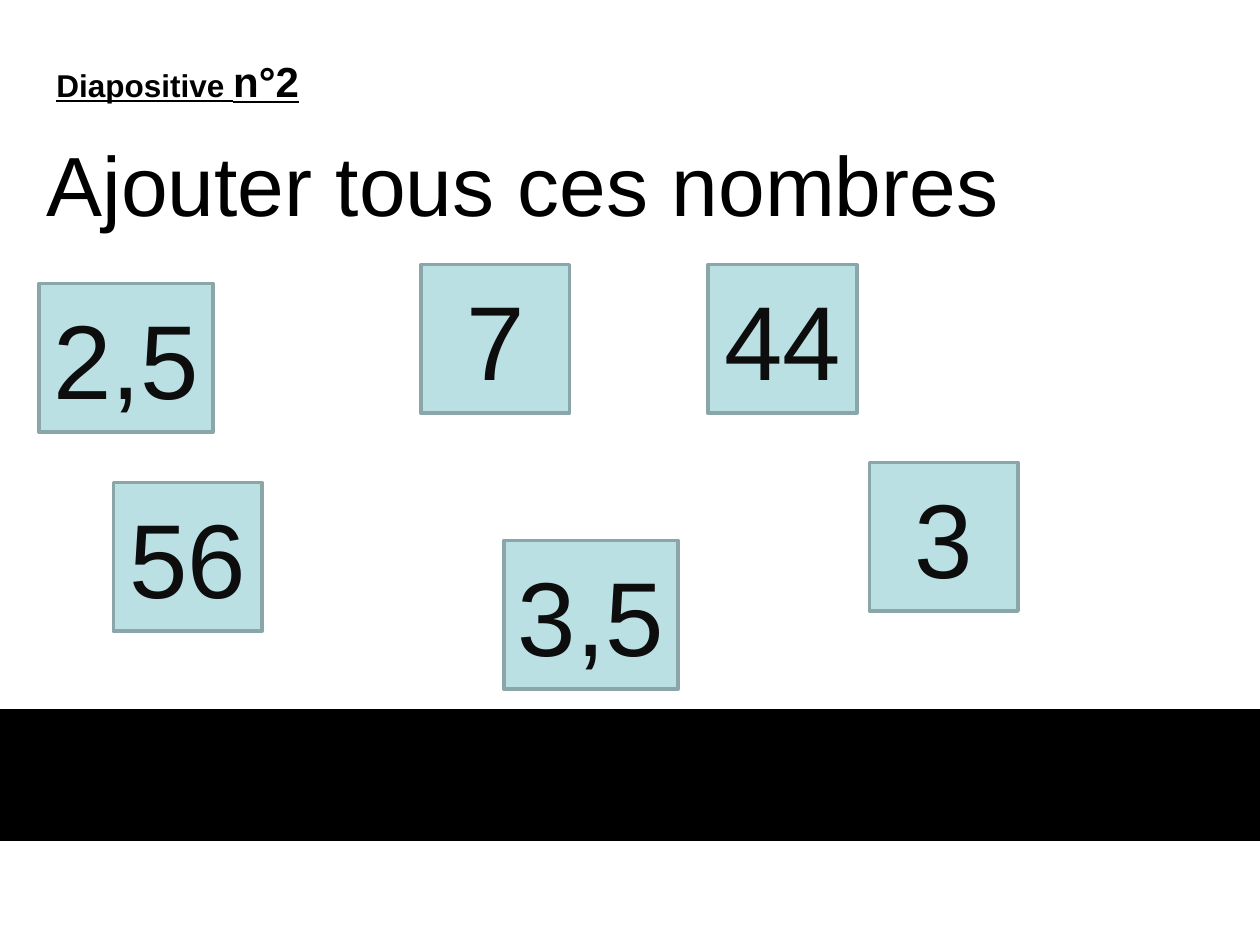
from dataclasses import dataclass

from pptx import Presentation, util as u
from pptx.dml.color import RGBColor
from pptx.enum import shapes, text

HUES = {"ink": "000000", "digit": "0D0D0D", "tile": "BBE0E3", "edge": "8AA6A8"}
SIDE = 1.18
WIDE = 1.38


@dataclass
class Tile:
    label: str
    left: float
    top: float
    width: float = SIDE


TILES = [
    Tile("2,5", 0.31, 2.25, WIDE),
    Tile("56", 0.9, 3.83),
    Tile("3", 6.9, 3.67),
    Tile("44", 5.62, 2.1),
    Tile("7", 3.34, 2.1),
    Tile("3,5", 4, 4.29, WIDE),
]


def hue(name: str) -> RGBColor:
    return RGBColor.from_string(HUES[name])


def write(para, words: str, *, size: float, color: str = "ink",
          bold: bool = False, under: bool = False,
          align=text.PP_ALIGN.LEFT) -> None:
    para.alignment = align
    run = para.add_run()
    run.text = words
    font = run.font
    font.name = "Arial"
    font.size = u.Pt(size)
    font.bold = bold
    font.underline = under
    font.color.rgb = hue(color)


def block(slide, left: float, top: float, width: float, height: float,
          fill: str, edge: str):
    box = slide.shapes.add_shape(
        shapes.MSO_SHAPE.RECTANGLE,
        u.Inches(left), u.Inches(top), u.Inches(width), u.Inches(height))
    box.shadow.inherit = False
    box.fill.solid()
    box.fill.fore_color.rgb = hue(fill)
    box.line.color.rgb = hue(edge)
    box.line.width = u.Pt(2)
    return box


def draw(slide, tile: Tile) -> None:
    box = block(slide, tile.left, tile.top, tile.width, SIDE, "tile", "edge")
    frame = box.text_frame
    frame.vertical_anchor = text.MSO_ANCHOR.MIDDLE
    write(frame.paragraphs[0], tile.label, size=60, color="digit",
          align=text.PP_ALIGN.CENTER)


def main() -> None:
    deck = Presentation()
    deck.slide_width, deck.slide_height = u.Inches(10), u.Inches(7.5)
    slide = deck.slides.add_slide(deck.slide_layouts[5])

    title = slide.shapes.title
    title.left, title.top = u.Inches(0.27), u.Inches(0.65)
    title.width, title.height = u.Inches(8.5), u.Inches(1.61)
    frame = title.text_frame
    frame.vertical_anchor = text.MSO_ANCHOR.MIDDLE
    frame.auto_size = text.MSO_AUTO_SIZE.NONE
    write(frame.paragraphs[0], "Ajouter tous ces nombres", size=48)

    head = slide.shapes.add_textbox(
        u.Inches(0.35), u.Inches(0.39), u.Inches(4.8), u.Inches(0.51))
    head.text_frame.word_wrap = True
    head.text_frame.auto_size = text.MSO_AUTO_SIZE.SHAPE_TO_FIT_TEXT
    para = head.text_frame.paragraphs[0]
    para.space_before = u.Pt(2)
    write(para, "Diapositive ", size=18, bold=True, under=True)
    write(para, "n°2", size=24, bold=True, under=True)

    block(slide, 0, 5.64, 10, 1.02, "ink", "ink")
    for tile in TILES:
        draw(slide, tile)

    deck.save("out.pptx")


if __name__ == "__main__":
    main()
